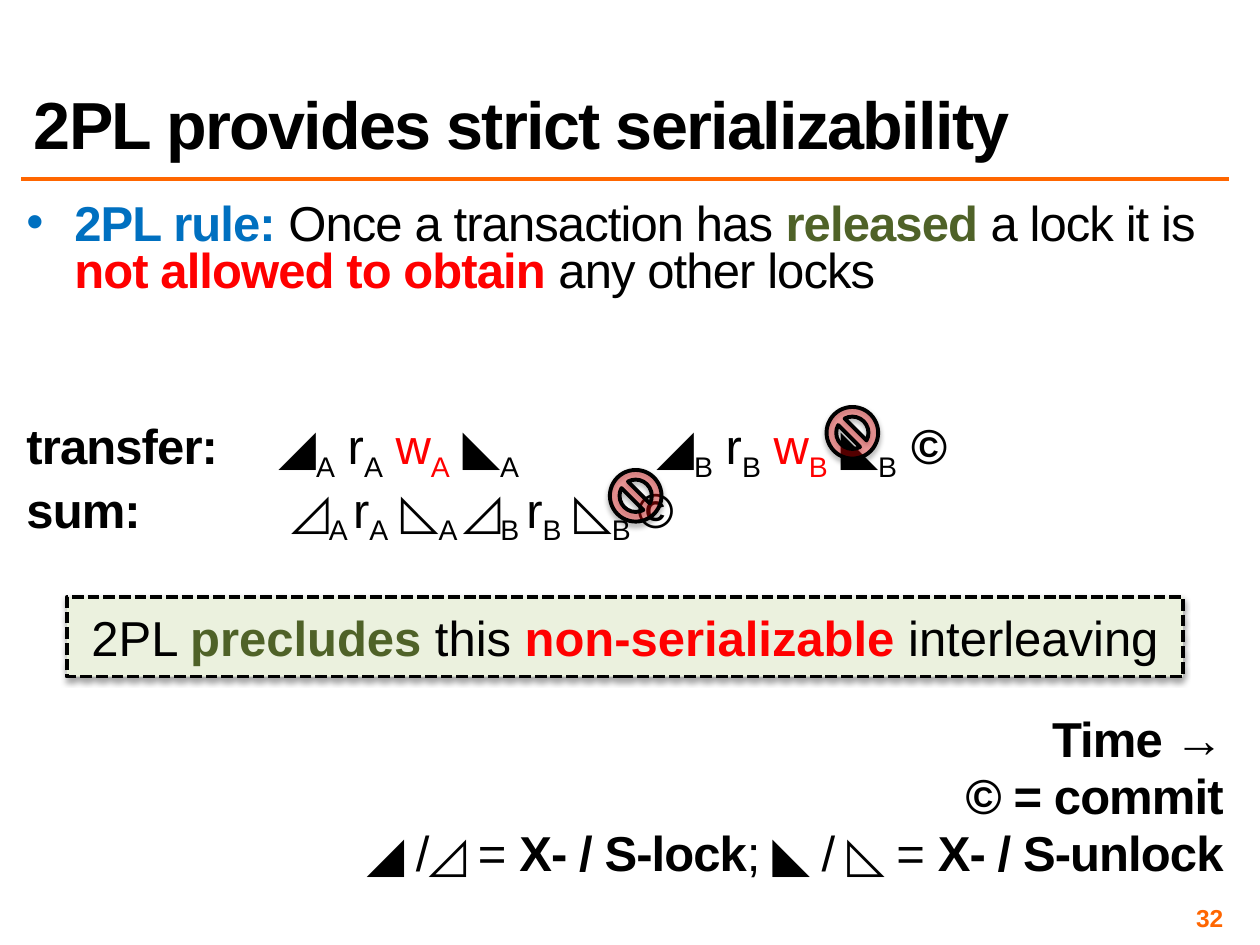
from lxml import etree
from pptx import Presentation
from pptx.dml.color import RGBColor
from pptx.enum.dml import MSO_LINE
from pptx.enum.shapes import MSO_CONNECTOR, MSO_SHAPE
from pptx.enum.text import MSO_ANCHOR, PP_ALIGN
from pptx.oxml.ns import qn
from pptx.util import Inches, Pt

COLORS = {
    "black": "000000", "red": "FF0000", "blue": "0070C0",
    "green": "4F6228", "orange": "FF6600", "pale": "EBF1DE",
}
TEXT_SIZE = 28
PARAGRAPH_GAP = 5.6
LINE_PITCH = 27


def add_element(parent, tag, **attributes):
    element = etree.SubElement(parent, qn(tag))
    for name, value in attributes.items():
        element.set(name, str(value))
    return element


class SlideBuilder:
    """Holds the text style and the slide being filled."""

    font = "Arial"

    def __init__(self, slide):
        self.slide = slide

    def color(self, name):
        return RGBColor.from_string(COLORS[name])

    def text_box(self, left, top, width, height, anchor=MSO_ANCHOR.TOP, inset=0.04):
        box = self.slide.shapes.add_textbox(
            Inches(left), Inches(top), Inches(width), Inches(height))
        frame = box.text_frame
        frame.word_wrap = True
        frame.vertical_anchor = anchor
        frame.margin_left = frame.margin_right = Inches(inset)
        frame.margin_top = frame.margin_bottom = Inches(min(inset, 0.05))
        return frame

    def paragraph(self, frame, runs, size=TEXT_SIZE, align=PP_ALIGN.LEFT,
                  line_spacing=None, before=0, tracking=0):
        """Fill the first empty paragraph or a new one; a run is (text, styles).

        Styles are words: a colour name, "bold" or "sub".
        """
        paragraph = frame.paragraphs[0]
        if paragraph.runs:
            paragraph = frame.add_paragraph()
        paragraph.alignment = align
        paragraph.space_before = Pt(before)
        if line_spacing:
            paragraph.line_spacing = line_spacing
        for text, styles in runs:
            words = styles.split()
            run = paragraph.add_run()
            run.text = text
            run.font.name = self.font
            run.font.size = Pt(size)
            run.font.bold = "bold" in words
            color = next((word for word in words if word in COLORS), "black")
            run.font.color.rgb = self.color(color)
            properties = run.font._element
            if tracking:
                properties.set("spc", str(int(tracking * 100)))
            if "sub" in words:
                properties.set("baseline", "-25000")
        return paragraph

    def bullet(self, paragraph, character, indent):
        properties = paragraph._p.get_or_add_pPr()
        properties.set("marL", str(Inches(indent)))
        properties.set("indent", str(-Inches(indent)))
        add_element(properties, "a:buFont", typeface=self.font)
        add_element(properties, "a:buChar", char=character)

    def tab_stops(self, paragraph, stops):
        tabs = add_element(paragraph._p.get_or_add_pPr(), "a:tabLst")
        for stop in stops:
            add_element(tabs, "a:tab", pos=Inches(stop), algn="l")

    def rule(self, left, top, right):
        line = self.slide.shapes.add_connector(
            MSO_CONNECTOR.STRAIGHT, Inches(left), Inches(top), Inches(right), Inches(top))
        line.line.color.rgb = self.color("orange")
        line.line.width = Pt(2)
        add_element(line._element.spPr, "a:effectLst")

    def shape(self, kind, left, top, width, height, fill, opacity=100, dash=None):
        shape = self.slide.shapes.add_shape(
            kind, Inches(left), Inches(top), Inches(width), Inches(height))
        shape.fill.solid()
        shape.fill.fore_color.rgb = self.color(fill)
        if opacity < 100:
            fill_color = shape._element.spPr.find(qn("a:solidFill"))[0]
            add_element(fill_color, "a:alpha", val=opacity * 1000)
        shape.line.color.rgb = self.color("black")
        shape.line.width = Pt(2.25)
        if dash:
            shape.line.dash_style = dash
        self.drop_shadow(shape)
        return shape

    def drop_shadow(self, shape):
        shape.shadow.inherit = False
        effects = shape._element.spPr.find(qn("a:effectLst"))
        shadow = add_element(effects, "a:outerShdw", blurRad=Pt(3.1), dist=Pt(1.8),
                             dir=90 * 60000, rotWithShape=0)
        shadow_color = add_element(shadow, "a:srgbClr", val=COLORS["black"])
        add_element(shadow_color, "a:alpha", val=35000)


def add_body(builder):
    frame = builder.text_box(0.17, 1.58, 9.58, 5.5)
    style = {"line_spacing": 0.8, "tracking": -0.5}

    def gap(skipped_lines):
        """Space before a paragraph that stands some lines further down."""
        return PARAGRAPH_GAP + skipped_lines * (PARAGRAPH_GAP + LINE_PITCH)

    rule = builder.paragraph(frame, [
        ("2PL rule:", "blue bold"), (" Once a transaction has ", ""),
        ("released ", "green bold"), ("a lock it is ", ""),
        ("not allowed to obtain ", "red bold"), ("any other locks", ""),
    ], before=PARAGRAPH_GAP, **style)
    builder.bullet(rule, "•", 0.38)

    def exclusive(item, lead, end):
        return [
            (lead + "◢", ""), (item, "sub"), (" r", ""), (item, "sub"),
            (" w", "red"), (item, "red sub"), (" ◣", ""), (item + end, "sub"),
        ]

    def shared(item, lead):
        return [
            (lead + "◿", ""), (item + " ", "sub"), ("r", ""), (item, "sub"),
            (" ◺", ""), (item + " ", "sub"),
        ]

    commit = [("©", "bold")]
    schedules = [
        ([("transfer:", "bold")] + exclusive("A", " \t", "")
         + exclusive("B", " \t\t", "  ") + commit, gap(2)),
        ([("sum:", "bold")] + shared("A", " \t\t ") + shared("B", "") + commit, gap(0)),
    ]
    for runs, before in schedules:
        paragraph = builder.paragraph(frame, runs, before=before, **style)
        builder.tab_stops(paragraph, [1.3, 2, 4.4, 5])

    legend = [
        ([("Time →", "bold")], gap(3)),
        ([("© = commit", "bold")], gap(0)),
        ([("◢ /◿ = ", ""), ("X- / S-lock", "bold"),
          ("; ◣ / ◺ = ", ""), ("X- / S-unlock", "bold")], gap(0)),
    ]
    for runs, before in legend:
        builder.paragraph(frame, runs, align=PP_ALIGN.RIGHT, before=before, **style)


def main():
    presentation = Presentation()
    presentation.slide_width = Inches(10)
    presentation.slide_height = Inches(7.5)
    builder = SlideBuilder(presentation.slides.add_slide(presentation.slide_layouts[6]))

    builder.rule(0.17, 1.42, 9.75)
    add_body(builder)

    number = builder.text_box(7.42, 7.17, 2.33, 0.23, MSO_ANCHOR.MIDDLE)
    builder.paragraph(number, [("32", "orange bold")], size=14, align=PP_ALIGN.RIGHT)

    title = builder.text_box(0.17, 0.17, 9.58, 1.17, MSO_ANCHOR.BOTTOM, inset=0.1)
    builder.paragraph(title, [("2PL provides strict serializability", "bold")],
                      size=38, line_spacing=0.8, tracking=-1)

    banner = builder.shape(MSO_SHAPE.RECTANGLE, 0.53, 4.74, 8.86, 0.63, "pale",
                           dash=MSO_LINE.SQUARE_DOT)
    banner.text_frame.vertical_anchor = MSO_ANCHOR.MIDDLE
    builder.paragraph(banner.text_frame, [
        ("2PL ", ""), ("precludes ", "green bold"), ("this ", ""),
        ("non-serializable ", "red bold"), ("interleaving", ""),
    ], align=PP_ALIGN.CENTER)

    for left, top in [(6.56, 3.23), (4.84, 3.73)]:
        builder.shape(MSO_SHAPE.NO_SYMBOL, left, top, 0.41, 0.41, "red", opacity=33)

    presentation.save("out.pptx")


if __name__ == "__main__":
    main()
